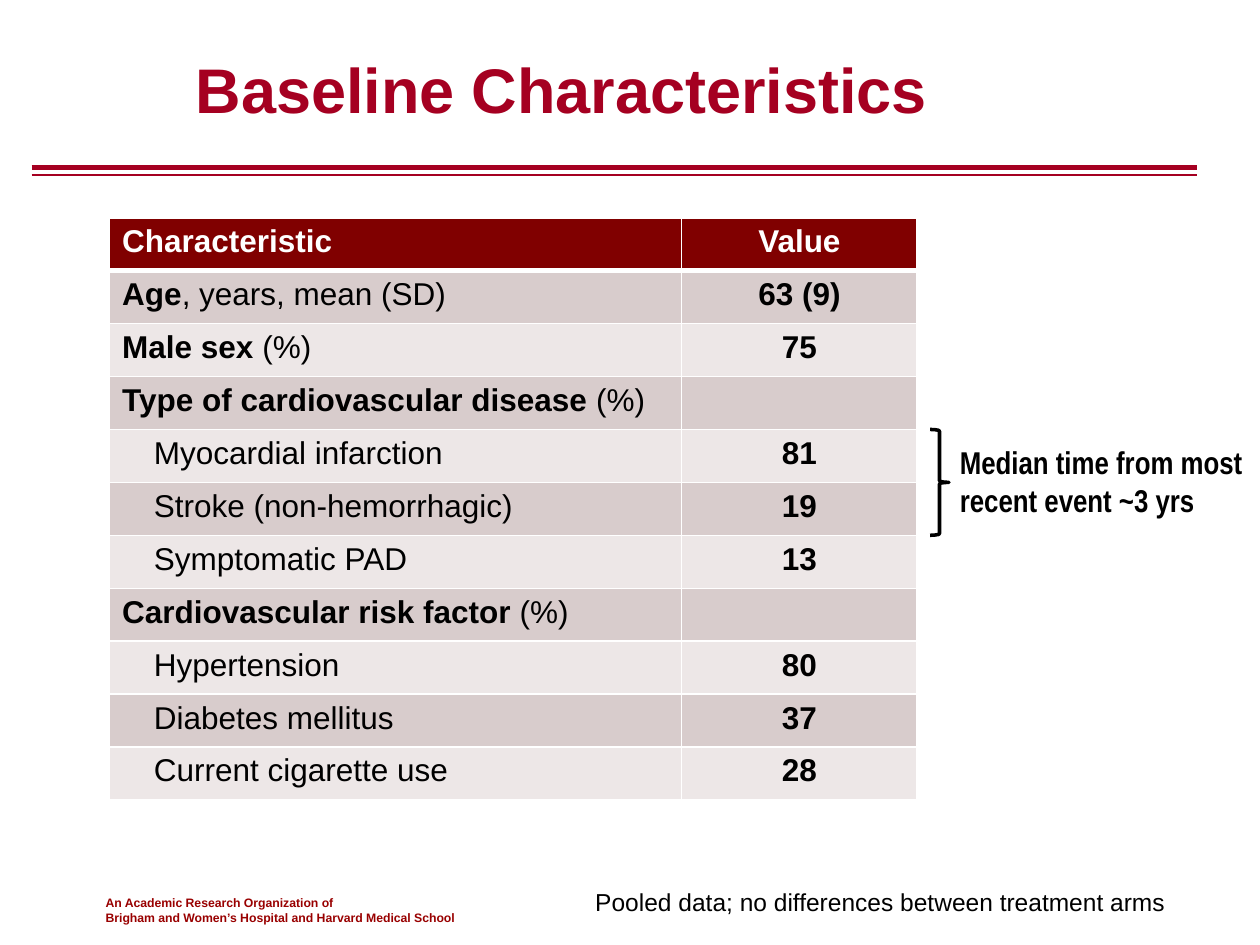
from dataclasses import dataclass

from lxml.etree import SubElement
from pptx import Presentation
from pptx.dml.color import RGBColor
from pptx.enum.shapes import MSO_CONNECTOR, MSO_SHAPE
from pptx.enum.text import MSO_ANCHOR as Anchor, PP_ALIGN as Align
from pptx.oxml import parse_xml
from pptx.oxml.ns import nsdecls, qn
from pptx.util import Cm, Pt

COLORS = {"crimson": "A50021", "maroon": "800000", "footer": "990000", "black": "000000",
          "white": "FFFFFF", "band_dark": "D8CCCC", "band_light": "EDE7E7"}

# Table geometry in centimetres
TABLE_LEFT, TABLE_TOP, ROW_HEIGHT = 2.21, 4.39, 1.067
COL_WIDTHS = (11.53, 4.75)
INDENT = 0.64


@dataclass
class Row:
    bold: str = ""
    plain: str = ""
    value: str = ""
    indented: bool = False


@dataclass
class Label:
    text: str
    box: tuple[float, float, float, float]
    size: float
    color: str = "black"
    font: str = "Arial"
    bold: bool = True
    align: Align = Align.LEFT
    anchor: Anchor = Anchor.TOP
    wrap: bool = True


ROWS = [
    Row("Age", ", years, mean (SD)", "63 (9)"),
    Row("Male sex ", "(%)", "75"),
    Row("Type of cardiovascular disease ", "(%)"),
    Row(plain="Myocardial infarction", value="81", indented=True),
    Row(plain="Stroke (non-hemorrhagic)", value="19", indented=True),
    Row(plain="Symptomatic PAD", value="13", indented=True),
    Row("Cardiovascular risk factor ", "(%)"),
    Row(plain="Hypertension", value="80", indented=True),
    Row(plain="Diabetes mellitus", value="37", indented=True),
    Row(plain="Current cigarette use", value="28", indented=True),
]

LABELS = [
    Label("An Academic Research Organization of\n"
          "Brigham and Women’s Hospital and Harvard Medical School",
          (1.88, 17.93, 11, 0.84), 7, "footer"),
    Label("Baseline Characteristics", (2.11, 0.2, 18.42, 3.18), 36, "crimson",
          align=Align.CENTER, anchor=Anchor.MIDDLE),
    Label("Pooled data; no differences between treatment arms",
          (11.73, 17.75, 12.04, 0.86), 14, bold=False, align=Align.CENTER, wrap=False),
    Label("Median time from most recent event ~3 yrs",
          (19.1, 8.81, 6.43, 1.8), 18, font="Arial Narrow"),
]


def rgb(name: str) -> RGBColor:
    return RGBColor.from_string(COLORS[name])


def style(font, size: float, color: str, bold: bool, name: str = "Arial") -> None:
    font.name, font.size, font.bold = name, Pt(size), bold
    font.color.rgb = rgb(color)


def add_label(slide, label: Label) -> None:
    tf = slide.shapes.add_textbox(*map(Cm, label.box)).text_frame
    tf.word_wrap, tf.vertical_anchor = label.wrap, label.anchor
    tf.text = label.text
    for p in tf.paragraphs:
        p.alignment = label.align
        for r in p.runs:
            style(r.font, label.size, label.color, label.bold, label.font)


def add_rule(slide, y: float, width: float) -> None:
    line = slide.shapes.add_connector(MSO_CONNECTOR.STRAIGHT, Cm(0.64), Cm(y), Cm(24.13), Cm(y))
    line.line.color.rgb, line.line.width = rgb("crimson"), Pt(width)
    SubElement(line._element.spPr, qn("a:effectLst"))


def style_cell(cell, fill: str, top: float, bottom: float) -> None:
    cell.fill.solid()
    cell.fill.fore_color.rgb = rgb(fill)
    widths = {"lnL": 1, "lnR": 1, "lnT": top, "lnB": bottom}
    tc_pr = cell._tc.get_or_add_tcPr()
    for i, (side, width) in enumerate(widths.items()):
        tc_pr.insert(i, parse_xml(
            f'<a:{side} {nsdecls("a")} w="{Pt(width)}"><a:solidFill>'
            f'<a:srgbClr val="{COLORS["white"]}"/></a:solidFill></a:{side}>'))


def fill_row(table, i: int, row: Row) -> None:
    fill = "maroon" if i == 0 else "band_dark" if i % 2 else "band_light"
    color = "white" if i == 0 else "black"
    name_p, value_p = (table.cell(i, c).text_frame.paragraphs[0] for c in range(2))
    value_p.alignment = Align.CENTER
    if row.indented:
        name_p._p.get_or_add_pPr().set("marL", str(Cm(INDENT)))
    for p, text, bold in ((name_p, row.bold, True), (name_p, row.plain, False),
                          (value_p, row.value, True)):
        if text:
            r = p.add_run()
            r.text = text
            style(r.font, 18, color, bold)
    for c in range(2):
        style_cell(table.cell(i, c), fill, top=3 if i == 1 else 1, bottom=3 if i == 0 else 1)


def add_characteristics(slide) -> None:
    rows = [Row("Characteristic", value="Value"), *ROWS]
    table = slide.shapes.add_table(len(rows), 2, Cm(TABLE_LEFT), Cm(TABLE_TOP),
                                   Cm(sum(COL_WIDTHS)), Cm(ROW_HEIGHT * len(rows))).table
    for col, width in zip(table.columns, COL_WIDTHS):
        col.width = Cm(width)
    for i, row in enumerate(rows):
        table.rows[i].height = Cm(ROW_HEIGHT)
        fill_row(table, i, row)


def add_brace(slide, first_row: int, row_count: int) -> None:
    sp = slide.shapes.add_shape(MSO_SHAPE.RIGHT_BRACE, Cm(18.75),
                                Cm(TABLE_TOP + first_row * ROW_HEIGHT),
                                Cm(0.38), Cm(row_count * ROW_HEIGHT))
    sp.shadow.inherit = False
    sp.fill.background()
    sp.line.color.rgb, sp.line.width = rgb("black"), Pt(2)


def main() -> None:
    prs = Presentation()
    prs.slide_width, prs.slide_height = Cm(25.4), Cm(19.05)
    slide = prs.slides.add_slide(prs.slide_layouts[6])

    # Double rule under the title
    add_rule(slide, 3.38, 3)
    add_rule(slide, 3.53, 1.5)

    # Title, notes and footer
    for label in LABELS:
        add_label(slide, label)

    # Table, with a brace beside the infarction and stroke rows
    add_characteristics(slide)
    add_brace(slide, first_row=4, row_count=2)

    prs.save("out.pptx")


if __name__ == "__main__":
    main()
